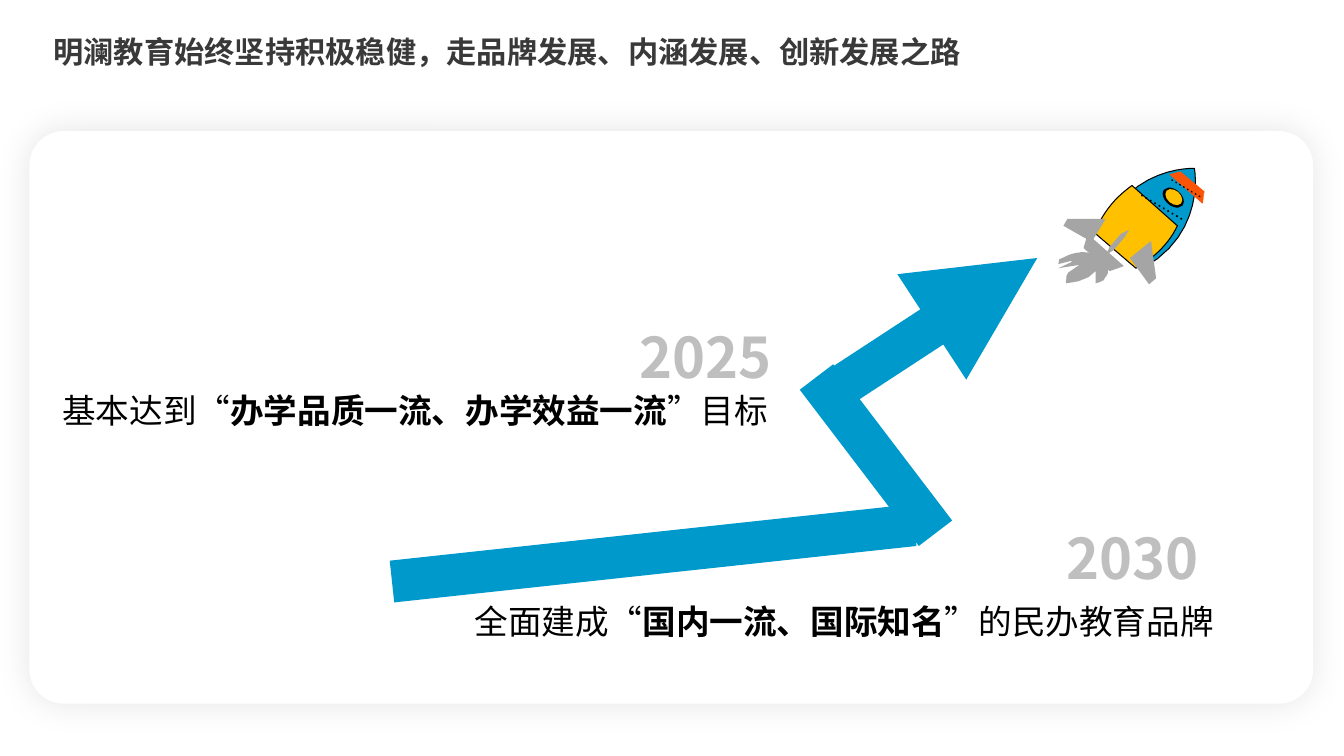
import dataclasses

import lxml.etree
import pptx
import pptx.dml.color
import pptx.enum.shapes
import pptx.enum.text
import pptx.oxml.ns
import pptx.util

Pt = pptx.util.Pt
qn = pptx.oxml.ns.qn
SHAPE = pptx.enum.shapes.MSO_SHAPE
ALIGN = pptx.enum.text.PP_ALIGN


@dataclasses.dataclass(frozen=True)
class Theme:
    """Colours, fonts and type sizes of the deck."""
    white: str = "FFFFFF"
    black: str = "000000"
    blue: str = "0099CC"
    yellow: str = "FFC000"
    orange: str = "FB5406"
    metal: str = "A5A5A5"
    glint: str = "C8DFE2"
    year: str = "BFBFBF"
    heading: str = "393939"
    title_font: str = "Arial"
    body_font: str = "Noto Sans CJK SC"
    title_size: float = 21.6
    body_size: float = 24
    year_size: float = 40


THEME = Theme()

ARROW_LEGS = [(259, 321.8, 632, 281.5), (647.2, 287.3, 562.2, 175.7), (574.4, 185.8, 719.9, 90.7)]

GOALS = [
    ("2025", (397.3, 133.2, 139.7, 55.4), (16.4, 181.4, 540, 36),
     ("基本达到“", "办学品质一流、办学效益一流", "”目标")),
    ("2030", (641.4, 276.5, 200.9, 55.4), (310.9, 331.9, 548, 36),
     ("全面建成“", "国内一流、国际知名", "”的民办教育品牌")),
]

NOZZLE = [(36.7, 83.5), (18, 67), (20.9, 56.9), (46.8, 79.9)]
HULL = [(97.2, 10.1), (97.2, 10.1, 105.8, 56.2, 60.5, 81.4), (31.7, 56.2),
        (50.4, 7.9, 97.2, 10.1, 97.2, 10.1)]
BODY = [(25.9, 56.2), (55.4, 81.4), (70.6, 72.7, 79.9, 61.9, 85, 51.1), (52.6, 22.3),
        (42.5, 29.5, 32.4, 39.6, 25.9, 56.2)]
STRIPE = [(79.2, 14.4), (103, 35.3), (103.7, 32.4, 103.7, 29.5, 104.4, 26.6), (87.1, 12.2)]
FINS = [
    [(23.8, 62.6), (3.6, 51.1), (6.5, 46.1), (33.8, 46.1)],
    [(51.1, 74.2), (64.8, 92.9), (69.8, 88.6), (66.2, 61.9)],
    [(44.6, 56.9), (50.4, 54), (47.5, 59), (39.6, 68.4), (33.8, 72), (36.7, 66.2)],
]
GLINT = [(104.4, 23.8), (104.4, 25), (103.7, 30.2)]
FLAMES = [
    [(25.2, 70.6), (16.6, 69.8), (14.4, 70.6, 14.4, 69.8, 9.4, 71.3),
     (5, 72.7, 3.6, 74.2, 0.7, 74.9), (0, 78.5), (8.6, 76.3), (15.8, 78.5), (8.6, 83.5),
     (7.9, 84.2, 7.2, 83.5, 5.8, 87.1), (5.8, 90.7, 5, 90.7, 5.8, 92.2), (14.4, 90.7),
     (21.6, 87.8), (26.6, 83.5), (26.6, 92.2), (29.5, 91.4, 27.4, 92.2, 32.4, 90),
     (33.8, 87.1, 34.6, 87.1, 35.3, 85), (36, 74.2)],
    [(9.4, 77), (0, 81.4), (13.7, 79.2), (20.9, 79.2), (13, 74.9)],
]
RIVET_ROWS = [(10, 59, 28.8, 3.12, 1.84, 1.4), (8, 80.6, 18, 2.78, 1.65, 1)]
WINDOW = [((73.4, 25.2, 17.3, 11.5), THEME.black), ((75.6, 25.9, 13.7, 9.4), THEME.yellow)]
TILT = 41.1


def rgb(code):
    """Return the colour object for a hex code."""
    return pptx.dml.color.RGBColor.from_string(code)


def within(box, left, top, width, height):
    """Return lengths for a part placed relative to a box."""
    return Pt(box[0] + left), Pt(box[1] + top), Pt(width), Pt(height)


def paint(shape, fill, outline=None):
    """Give a shape a flat fill and an optional thin outline."""
    shape.shadow.inherit = False
    shape.fill.solid()
    shape.fill.fore_color.rgb = rgb(fill)
    if outline:
        shape.line.color.rgb = rgb(outline)
        shape.line.width = Pt(0.75)
    else:
        shape.line.fill.background()


def style(para, font, size, colour, bold=None):
    """Set the font of a whole paragraph, East Asian text included."""
    para.font.size = Pt(size)
    para.font.bold = bold
    para.font.color.rgb = rgb(colour)
    para.font.name = font
    properties = para._p.pPr.find(qn("a:defRPr"))
    lxml.etree.SubElement(properties, qn("a:ea"), typeface=font)


def add_title(page, box, text):
    """Place and format the title placeholder."""
    title = page.shapes.title
    title.left, title.top, title.width, title.height = map(Pt, box)
    frame = title.text_frame
    frame.text = text
    frame.word_wrap = True
    frame.auto_size = pptx.enum.text.MSO_AUTO_SIZE.NONE
    frame.vertical_anchor = pptx.enum.text.MSO_ANCHOR.BOTTOM
    frame.margin_left = frame.margin_top = frame.margin_right = frame.margin_bottom = Pt(0)
    para = frame.paragraphs[0]
    para.alignment = ALIGN.LEFT
    para.line_spacing = 0.9
    style(para, THEME.title_font, THEME.title_size, THEME.heading, True)


def add_panel(page, box):
    """Draw the rounded white card with its soft shadow."""
    panel = page.shapes.add_shape(SHAPE.ROUNDED_RECTANGLE, *map(Pt, box))
    panel.adjustments[0] = 0.06
    paint(panel, THEME.white)
    effects = panel._element.spPr.find(qn("a:effectLst"))
    shadow = lxml.etree.SubElement(effects, qn("a:outerShdw"), blurRad=str(Pt(25)), dist="0",
                                   algn="ctr", rotWithShape="0")
    colour = lxml.etree.SubElement(shadow, qn("a:srgbClr"), val=THEME.black)
    lxml.etree.SubElement(colour, qn("a:alpha"), val="10000")


def add_growth_arrow(page, box):
    """Draw the zigzag arrow, with a head on its last leg."""
    for x1, y1, x2, y2 in ARROW_LEGS:
        leg = page.shapes.add_connector(
            pptx.enum.shapes.MSO_CONNECTOR.STRAIGHT,
            Pt(box[0] + x1), Pt(box[1] + y1), Pt(box[0] + x2), Pt(box[1] + y2))
        leg.line.color.rgb = rgb(THEME.blue)
        leg.line.width = Pt(30)
        lxml.etree.SubElement(leg._element.spPr, qn("a:effectLst"))
    lxml.etree.SubElement(leg.line._get_or_add_ln(), qn("a:tailEnd"), type="triangle")


def add_text(page, place, spans, size, colour, align=ALIGN.LEFT, bold=None):
    """Add a one-paragraph text box; the middle one of three spans is bold."""
    frame = page.shapes.add_textbox(*place).text_frame
    frame.word_wrap = True
    frame.auto_size = pptx.enum.text.MSO_AUTO_SIZE.SHAPE_TO_FIT_TEXT
    para = frame.paragraphs[0]
    para.alignment = align
    for index, text in enumerate(spans):
        span = para.add_run()
        span.text = text
        if index == 1:
            span.font.bold = True
    style(para, THEME.body_font, size, colour, bold)


def add_goals(page, box):
    """Write each goal and its year inside the card."""
    for year, year_box, goal_box, spans in GOALS:
        add_text(page, within(box, *goal_box), spans, THEME.body_size, THEME.black)
        add_text(page, within(box, *year_box), [year], THEME.year_size, THEME.year,
                 ALIGN.RIGHT, True)


def trace(outline, steps=12):
    """Turn lines and cubic curves into a list of points."""
    points = [outline[0]]
    for segment in outline[1:]:
        if len(segment) == 2:
            points.append(segment)
            continue
        controls = [points[-1], segment[:2], segment[2:4], segment[4:]]
        for step in range(1, steps + 1):
            t = step / steps
            weights = [(1 - t) ** 3, 3 * t * (1 - t) ** 2, 3 * t ** 2 * (1 - t), t ** 3]
            points.append(tuple(sum(w * point[axis] for w, point in zip(weights, controls))
                                for axis in (0, 1)))
    return points


def add_rocket(page, box):
    """Draw the rocket as one group."""
    rocket = page.shapes.add_group_shape()

    def add_outline(outline, fill, line=None):
        """Add one closed outline to the rocket."""
        points = [(Pt(box[0] + x), Pt(box[1] + y)) for x, y in trace(outline)]
        builder = rocket.shapes.build_freeform(*points[0])
        builder.add_line_segments(points[1:], close=True)
        paint(builder.convert_to_shape(), fill, line)

    def add_oval(place, fill):
        """Add one tilted oval to the rocket."""
        oval = rocket.shapes.add_shape(SHAPE.OVAL, *within(box, *place))
        oval.rotation = TILT
        paint(oval, fill)

    add_outline(NOZZLE, THEME.metal)
    add_outline(HULL, THEME.blue, THEME.black)
    add_outline(BODY, THEME.yellow, THEME.black)
    add_outline(STRIPE, THEME.orange)
    for count, left, top, step_x, step_y, height in RIVET_ROWS:
        for index in range(count):
            add_oval((left + index * step_x, top + index * step_y, 1.4, height), THEME.black)
    for fin in FINS:
        add_outline(fin, THEME.metal)
    for place, fill in WINDOW:
        add_oval(place, fill)
    add_outline(GLINT, THEME.glint)
    for flame in FLAMES:
        add_outline(flame, THEME.metal)


def main():
    """Build the slide and save the deck."""
    deck = pptx.Presentation()
    deck.slide_width, deck.slide_height = Pt(960), Pt(540)
    page = deck.slides.add_slide(deck.slide_layouts[5])
    card = (21, 93.6, 917, 409)
    add_title(page, (38.2, 8.6, 717, 41.8),
              "明澜教育始终坚持积极稳健，走品牌发展、内涵发展、创新发展之路")
    add_panel(page, card)
    add_growth_arrow(page, card)
    add_goals(page, card)
    add_rocket(page, (card[0] + 735, card[1] + 16.6))
    deck.save("out.pptx")


if __name__ == "__main__":
    main()
